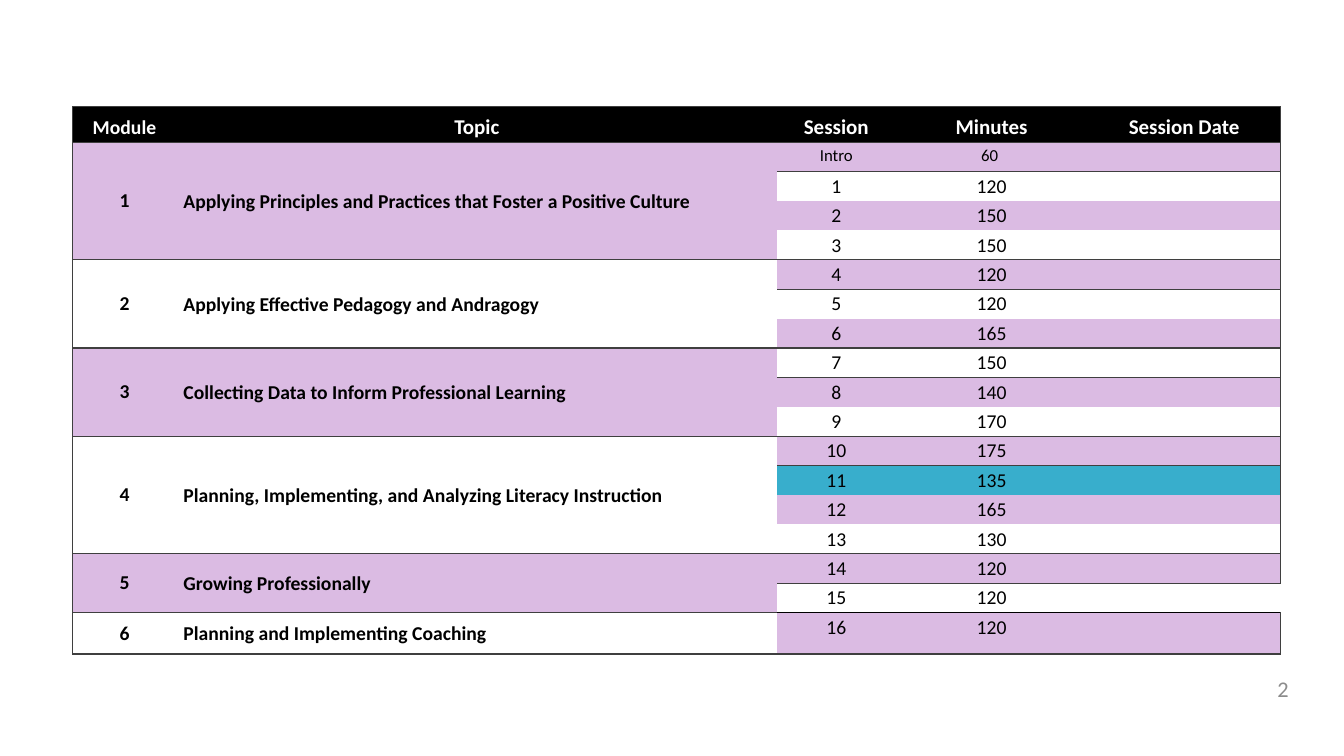
from dataclasses import dataclass

from lxml import etree
from pptx import Presentation
from pptx.dml.color import RGBColor
from pptx.enum.text import MSO_ANCHOR, PP_ALIGN
from pptx.oxml.ns import qn
from pptx.util import Inches, Pt

CENTER, LEFT, RIGHT = PP_ALIGN.CENTER, PP_ALIGN.LEFT, PP_ALIGN.RIGHT
TOP, MIDDLE, BOTTOM = MSO_ANCHOR.TOP, MSO_ANCHOR.MIDDLE, MSO_ANCHOR.BOTTOM

HEADINGS = ["Module", "Topic", "Session", "Minutes", "Session Date"]
MODULES = [
    ("Applying Principles and Practices that Foster a Positive Culture",
     [("Intro", "60 "), ("1", "120"), ("2", "150"), ("3", "150")]),
    ("Applying Effective Pedagogy and Andragogy",
     [("4", "120"), ("5", "120"), ("6", "165")]),
    ("Collecting Data to Inform Professional Learning",
     [("7", "150"), ("8", "140"), ("9", "170")]),
    ("Planning, Implementing, and Analyzing Literacy Instruction",
     [("10", "175"), ("11", "135"), ("12", "165"), ("13", "130")]),
    ("Growing Professionally", [("14", "120"), ("15", "120")]),
    ("Planning and Implementing Coaching", [("16", "120")]),
]
HIGHLIGHTED_SESSION = "11"
OPEN_EDGE_SESSION = "15"
PAGE_NUMBER = "2"

TABLE_LEFT, TABLE_TOP, TABLE_HEIGHT = 0.72, 1.06, 5.43
COLUMN_WIDTHS = [1.03, 5.96, 1.17, 1.91, 1.91]
HEADER_HEIGHT, LAST_HEIGHT = 0.35, 0.41
PLAIN_STYLE = "{2D5ABB26-0587-4C30-8999-92F81FD0307C}"  # no style, no grid


@dataclass(frozen=True)
class Theme:
    font: str = "Calibri"
    black: str = "000000"
    white: str = "FFFFFF"
    lilac: str = "DBBBE3"
    teal: str = "38AECC"
    border: str = "3F3F3F"
    grey: str = "8C8C8C"
    heading: int = 15
    body: int = 14
    intro: int = 12
    page: int = 16


THEME = Theme()


def write(paragraph, words, size, color, bold=False, align=CENTER):
    paragraph.text = words
    paragraph.alignment = align
    paragraph.font.name = THEME.font
    paragraph.font.size = Pt(size)
    paragraph.font.bold = bold
    paragraph.font.color.rgb = RGBColor.from_string(color)


def add_borders(cell, borders):
    """Draw 1 pt edges; borders maps L, R, T or B to a colour."""
    properties = cell._tc.get_or_add_tcPr()
    for side in "LRTB":
        if side in borders:
            line = etree.SubElement(properties, qn(f"a:ln{side}"), w=str(Pt(1)))
            fill = etree.SubElement(line, qn("a:solidFill"))
            etree.SubElement(fill, qn("a:srgbClr"), val=borders[side])


def format_cell(cell, words, fill, borders, anchor=TOP, inset=(0.06, 0.03),
                size=THEME.body, color=THEME.black, **style):
    add_borders(cell, borders)
    cell.fill.solid()
    cell.fill.fore_color.rgb = RGBColor.from_string(fill)
    cell.vertical_anchor = anchor
    side, top = inset
    cell.margin_left = cell.margin_right = Inches(side)
    cell.margin_top = Inches(top)
    cell.margin_bottom = Inches(min(top, 0.02))
    write(cell.text_frame.paragraphs[0], words, size, color, **style)


def edges(*sides):
    return dict.fromkeys(sides, THEME.border)


def fill_header(table):
    last = len(HEADINGS) - 1
    for column, heading in enumerate(HEADINGS):
        borders = edges("T", "B")
        if column == 0:
            borders |= edges("L")
        if column == last:
            borders |= edges("R")
        format_cell(table.cell(0, column), heading, THEME.black, borders, BOTTOM,
                    size=THEME.heading if column else THEME.body,
                    color=THEME.white, bold=True)


def fill_module(table, number, topic, first, last):
    fill = THEME.lilac if number % 2 else THEME.white
    labels = [(str(number), CENTER, (0.07, 0), edges("L", "T", "B")),
              (topic, LEFT, (0.07, 0.03), edges("T", "B"))]
    for column, (words, align, inset, borders) in enumerate(labels):
        if last > first:
            table.cell(first, column).merge(table.cell(last, column))
        for row in range(first, last + 1):
            format_cell(table.cell(row, column), words if row == first else "",
                        fill, borders, MIDDLE, inset, bold=True, align=align)


def fill_session(table, row, session, minutes, first, last):
    fill = THEME.lilac if row % 2 else THEME.white
    # Striping restarts on each side of the module boundaries by session number
    if session.isdigit():
        fill = THEME.white if session in WHITE_SESSIONS else THEME.lilac
    if session == HIGHLIGHTED_SESSION:
        fill = THEME.teal
    borders = {}
    if row == first:
        borders["T"] = THEME.black if row == SESSION_COUNT else THEME.border
    if row == last:
        borders["B"] = THEME.black if session == OPEN_EDGE_SESSION else THEME.border
    size = THEME.body if session.isdigit() else THEME.intro
    for column, words in enumerate((session, minutes, ""), start=2):
        right = edges("R") if column == 4 and session != OPEN_EDGE_SESSION else {}
        format_cell(table.cell(row, column), words, fill, borders | right, size=size)


SESSION_COUNT = sum(len(sessions) for _, sessions in MODULES)
WHITE_SESSIONS = {"1", "3", "5", "7", "9", "13", "15"}


def add_schedule(slide):
    frame = slide.shapes.add_table(
        SESSION_COUNT + 1, len(HEADINGS), Inches(TABLE_LEFT), Inches(TABLE_TOP),
        Inches(sum(COLUMN_WIDTHS)), Inches(TABLE_HEIGHT))
    table = frame.table
    table._tbl.tblPr.find(qn("a:tableStyleId")).text = PLAIN_STYLE
    table.horz_banding = False
    for column, width in zip(table.columns, COLUMN_WIDTHS):
        column.width = Inches(width)
    row_height = (TABLE_HEIGHT - HEADER_HEIGHT - LAST_HEIGHT) / (SESSION_COUNT - 1)
    heights = [HEADER_HEIGHT, *[row_height] * (SESSION_COUNT - 1), LAST_HEIGHT]
    for row, height in zip(table.rows, heights):
        row.height = Inches(height)

    fill_header(table)
    first = 1
    for number, (topic, sessions) in enumerate(MODULES, start=1):
        last = first + len(sessions) - 1
        fill_module(table, number, topic, first, last)
        for row, (session, minutes) in enumerate(sessions, start=first):
            fill_session(table, row, session, minutes, first, last)
        first = last + 1


def add_page_number(slide):
    box = slide.shapes.add_textbox(Inches(10.55), Inches(6.68), Inches(2.33), Inches(0.3))
    box.text_frame.word_wrap = True
    box.text_frame.vertical_anchor = MIDDLE
    write(box.text_frame.paragraphs[0], PAGE_NUMBER, THEME.page, THEME.grey, align=RIGHT)


def main():
    deck = Presentation()
    deck.slide_width, deck.slide_height = Inches(13.33), Inches(7.5)
    slide = deck.slides.add_slide(deck.slide_layouts[6])
    add_schedule(slide)
    add_page_number(slide)
    deck.save("out.pptx")


if __name__ == "__main__":
    main()
